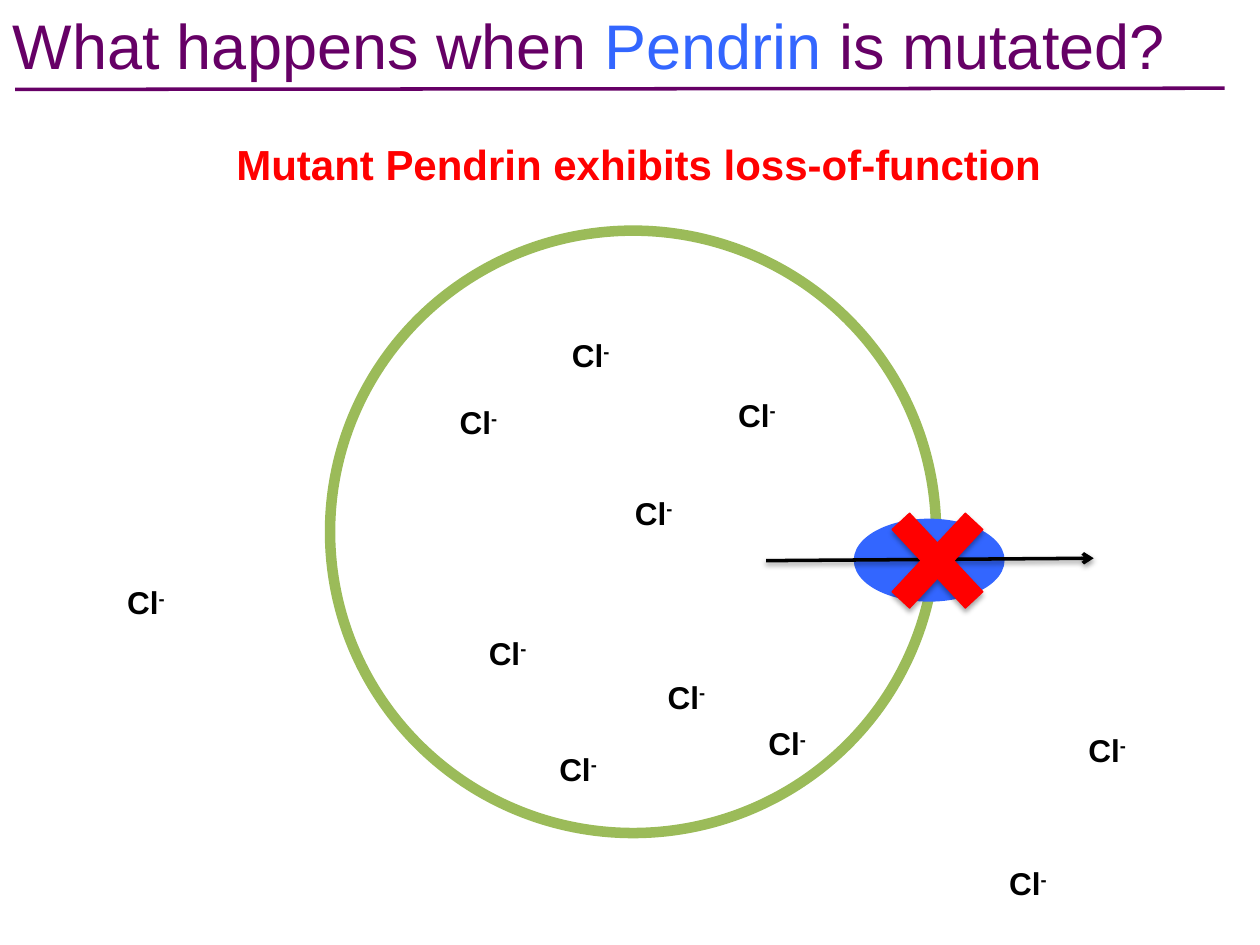
"""Build the slide on how mutated Pendrin blocks chloride transport."""
import pptx
import pptx.dml.color
import pptx.enum.shapes
import pptx.enum.text
import pptx.oxml.ns
import pptx.util
from lxml import etree

Pt = pptx.util.Pt
qn = pptx.oxml.ns.qn
SHAPES = pptx.enum.shapes.MSO_SHAPE
ANCHOR = pptx.enum.text.MSO_ANCHOR
ALIGN = pptx.enum.text.PP_ALIGN
PURPLE = pptx.dml.color.RGBColor(0x66, 0x00, 0x66)
BLUE = pptx.dml.color.RGBColor(0x33, 0x66, 0xFF)
GREEN = pptx.dml.color.RGBColor(0x9B, 0xBB, 0x59)
RED = pptx.dml.color.RGBColor(0xFF, 0x00, 0x00)
BLACK = pptx.dml.color.RGBColor(0x00, 0x00, 0x00)
WHITE = pptx.dml.color.RGBColor(0xFF, 0xFF, 0xFF)


def set_effects(shape, opacity=None, distance=0):
    """Replace the theme effects with none or with one downward shadow."""
    properties = shape._element.spPr
    effects = etree.SubElement(properties, qn("a:effectLst"))
    if opacity:
        shadow = etree.SubElement(
            effects, qn("a:outerShdw"), blurRad=str(Pt(3.1)),
            dist=str(Pt(distance)), dir="5400000", rotWithShape="0")
        color = etree.SubElement(shadow, qn("a:srgbClr"), val=str(BLACK))
        etree.SubElement(color, qn("a:alpha"), val=str(opacity * 1000))


def write_text(box, pieces, size, bold=False, align=ALIGN.LEFT, anchor=ANCHOR.TOP):
    """Fill a box with one paragraph of (text, colour, baseline) pieces."""
    frame_format = {
        "word_wrap": True, "vertical_anchor": anchor,
        "auto_size": pptx.enum.text.MSO_AUTO_SIZE.SHAPE_TO_FIT_TEXT,
        "margin_left": Pt(7.2), "margin_right": Pt(7.2),
        "margin_top": Pt(3.6), "margin_bottom": Pt(3.6)}
    for name, value in frame_format.items():
        setattr(box.text_frame, name, value)
    para = box.text_frame.paragraphs[0]
    para.alignment = align
    for text, color, baseline in pieces:
        span = para.add_run()
        span.text = text
        for name, value in {"name": "Arial", "size": Pt(size), "bold": bold}.items():
            setattr(span.font, name, value)
        span.font.color.rgb = color
        if baseline:
            span._r.get_or_add_rPr().set("baseline", str(baseline * 1000))


deck = pptx.Presentation()
deck.slide_width, deck.slide_height = Pt(720), Pt(540)
page = deck.slides.add_slide(deck.slide_layouts[5])

title = page.shapes.title
title_place = {"left": Pt(0), "top": Pt(0), "width": Pt(720), "height": Pt(51)}
for name, value in title_place.items():
    setattr(title, name, value)
write_text(title, [("What happens when ", PURPLE, 0), ("Pendrin", BLUE, 0),
                   (" is mutated?", PURPLE, 0)], 36)

ellipses = [
    ((188.6, 131.8, 346.3, 344.2), WHITE, GREEN, 6),
    ((488.9, 297.4, 84.2, 45.4), BLUE, BLUE, 2),
]
lines = [
    ((8.6, 51.1, 699.8, 50.4), PURPLE, False),
    ((437.8, 320.4, 625, 319), BLACK, True),
]
for place, fill, outline, weight in ellipses:
    ellipse = page.shapes.add_shape(SHAPES.OVAL, *map(Pt, place))
    ellipse.shadow.inherit = False
    ellipse.fill.solid()
    ellipse.fill.fore_color.rgb = fill
    ellipse.line.color.rgb = outline
    ellipse.line.width = Pt(weight)

for ends, color, is_arrow in lines:
    line = page.shapes.add_connector(
        pptx.enum.shapes.MSO_CONNECTOR.STRAIGHT, *map(Pt, ends))
    line.line.color.rgb = color
    line.line.width = Pt(2)
    if is_arrow:
        etree.SubElement(line.line._get_or_add_ln(), qn("a:tailEnd"), type="arrow")
        set_effects(line, 38, 1.6)
    else:
        set_effects(line)

ion_places = [
    (319.7, 188.6), (312.5, 424.8), (255.6, 226.8), (272.2, 358.6),
    (355.7, 278.6), (374.4, 383.8), (432, 410.4), (414.7, 222.5),
    (65.5, 329.8), (569.5, 490.3), (614.9, 414),
]
for left, top in ion_places:
    ion = page.shapes.add_textbox(Pt(left), Pt(top), Pt(71.3), Pt(29))
    write_text(ion, [("Cl", BLACK, 0), ("-", BLACK, 30)], 18, bold=True)

cross = page.shapes.add_shape(
    SHAPES.MATH_MULTIPLY, Pt(495.4), Pt(277.2), Pt(80.6), Pt(86.4))
cross.adjustments[0] = 0.17
cross.fill.solid()
cross.fill.fore_color.rgb = RED
cross.line.color.rgb = RED
cross.line.width = Pt(0.75)
set_effects(cross, 35, 1.8)

caption = page.shapes.add_textbox(Pt(43.9), Pt(75.6), Pt(642.2), Pt(36))
write_text(caption, [("Mutant Pendrin exhibits loss-of-function", RED, 0)], 24,
           bold=True, align=ALIGN.CENTER, anchor=ANCHOR.MIDDLE)

deck.save("out.pptx")
